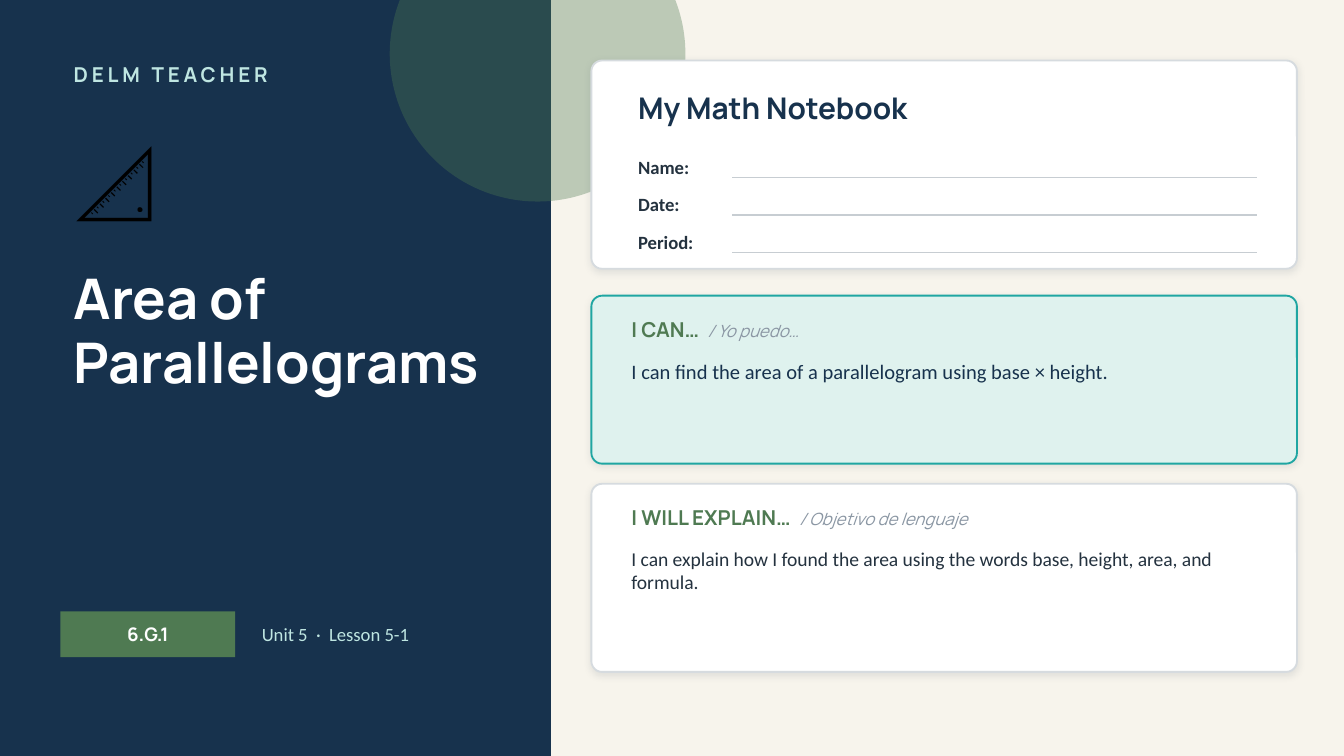
from lxml import etree
from pptx import Presentation
from pptx.dml.color import RGBColor
from pptx.enum.shapes import MSO_CONNECTOR, MSO_SHAPE
from pptx.enum.text import MSO_ANCHOR, PP_ALIGN
from pptx.oxml import parse_xml
from pptx.oxml.ns import nsdecls, qn
from pptx.util import Inches, Pt

RECT, OVAL, ROUND = MSO_SHAPE.RECTANGLE, MSO_SHAPE.OVAL, MSO_SHAPE.ROUNDED_RECTANGLE
STRAIGHT, CENTER = MSO_CONNECTOR.STRAIGHT, PP_ALIGN.CENTER
TOP, MIDDLE = MSO_ANCHOR.TOP, MSO_ANCHOR.MIDDLE
HEAD, BODY = "Manrope", "Calibri"
C = {
    "cream": "F7F4EC", "navy": "17324D", "green": "4F7A52", "aqua": "BFE6E2",
    "white": "FFFFFF", "black": "000000", "ink": "24323F", "muted": "8A96A3",
    "border": "D6DBDF", "rule": "C7CDD2", "mint": "DFF2EE", "teal": "1FA6A2",
    "shadow": "1C2E42",
}
WIDTH = 10
HEIGHT = WIDTH * 9 / 16
RADIUS = 0.08


def add_box(kind, x, y, w, h, fill, line=None):
    sp = s.shapes.add_shape(kind, Inches(x), Inches(y), Inches(w), Inches(h))
    sp.shadow.inherit = False
    sp.fill.solid()
    sp.fill.fore_color.rgb = RGBColor.from_string(C[fill])
    if line:
        sp.line.color.rgb = RGBColor.from_string(C[line])
        sp.line.width = Pt(1)
    else:
        sp.line.fill.background()
    return sp


def add_text(x, y, w, h, *runs, anchor=MIDDLE):
    """Add a text box; each run is (text, size, font, colour, bold, italic)."""
    tf = s.shapes.add_textbox(Inches(x), Inches(y), Inches(w), Inches(h)).text_frame
    tf.word_wrap = True
    tf.vertical_anchor = anchor
    p = tf.paragraphs[0]
    for text, size, font, color, bold, italic in runs:
        r = p.add_run()
        r.text = text
        r.font.size, r.font.name = Pt(size), font
        r.font.bold, r.font.italic = bold, italic
        r.font.color.rgb = RGBColor.from_string(C[color])
    return p


prs = Presentation()
prs.slide_width, prs.slide_height = Inches(WIDTH), Inches(HEIGHT)
s = prs.slides.add_slide(prs.slide_layouts[6])
s.background.fill.solid()
s.background.fill.fore_color.rgb = RGBColor.from_string(C["cream"])

# Left panel
add_box(RECT, 0, 0, 4.1, HEIGHT, "navy")
circle = add_box(OVAL, 2.9, -0.7, 2.2, 2.2, "green")
color = circle._element.spPr.find(qn("a:solidFill"))[0]
etree.SubElement(color, qn("a:alpha")).set("val", "35000")

p = add_text(0.45, 0.4, 3.3, 0.3, ("DELM TEACHER", 11, HEAD, "aqua", True, False))
p.runs[0]._r.get_or_add_rPr().set("spc", "200")
add_text(0.45, 0.85, 1.5, 0.9, ("📐", 44, BODY, "black", False, False))
p = add_text(0.45, 1.95, 3.3, 1.7,
             ("Area of Parallelograms", 30, HEAD, "white", True, False), anchor=TOP)
p.line_spacing = 0.95

badge = add_box(RECT, 0.45, 4.55, 1.3, 0.34, "green")
tf = badge.text_frame
tf.text = "6.G.1"
tf.vertical_anchor = MIDDLE
p = tf.paragraphs[0]
p.alignment = CENTER
font = p.runs[0].font
font.size, font.name, font.bold = Pt(10), HEAD, True
font.color.rgb = RGBColor.from_string(C["white"])
add_text(1.85, 4.55, 2.1, 0.34, ("Unit 5  ·  Lesson 5-1", 10, BODY, "aqua", False, False))

# Cards
for y, h, fill, line in [
    (0.45, 1.55, "white", "border"),
    (2.2, 1.25, "mint", "teal"),
    (3.6, 1.4, "white", "border"),
]:
    card = add_box(ROUND, 4.4, y, 5.25, h, fill, line)
    card.adjustments[0] = RADIUS / h
    effects = card._element.spPr.find(qn("a:effectLst"))
    effects.append(parse_xml(
        f'<a:outerShdw {nsdecls("a")} blurRad="{Pt(4)}" dist="{Pt(1)}" dir="5400000" '
        f'algn="bl" rotWithShape="0"><a:srgbClr val="{C["shadow"]}">'
        '<a:alpha val="10000"/></a:srgbClr></a:outerShdw>'))

# Notebook fields
add_text(4.65, 0.6, 4.8, 0.4, ("My Math Notebook", 16, HEAD, "navy", True, False))
for i, label in enumerate(["Name:", "Date:", "Period:"]):
    y = 1.12 + 0.28 * i
    add_text(4.65, y, 0.8, 0.24, (label, 10, BODY, "ink", True, False))
    rule = s.shapes.add_connector(STRAIGHT, Inches(5.45), Inches(y + 0.2),
                                  Inches(9.35), Inches(y + 0.2))
    rule.line.color.rgb = RGBColor.from_string(C["rule"])
    rule.line.width = Pt(0.75)
    etree.SubElement(rule._element.spPr, qn("a:effectLst"))

# Objectives
for y, h, title, spanish, goal, size, color in [
    (2.3, 0.78, "I CAN…  ", "/ Yo puedo…",
     "I can find the area of a parallelogram using base × height.", 11, "navy"),
    (3.7, 0.92, "I WILL EXPLAIN…  ", "/ Objetivo de lenguaje",
     "I can explain how I found the area using the words base, height, area, and formula.",
     10.5, "ink"),
]:
    add_text(4.6, y, 4.85, 0.3, (title, 11, HEAD, "green", True, False),
             (spanish, 9, HEAD, "muted", False, True))
    add_text(4.6, y + 0.32, 4.85, h, (goal, size, BODY, color, False, False), anchor=TOP)

prs.save("out.pptx")
